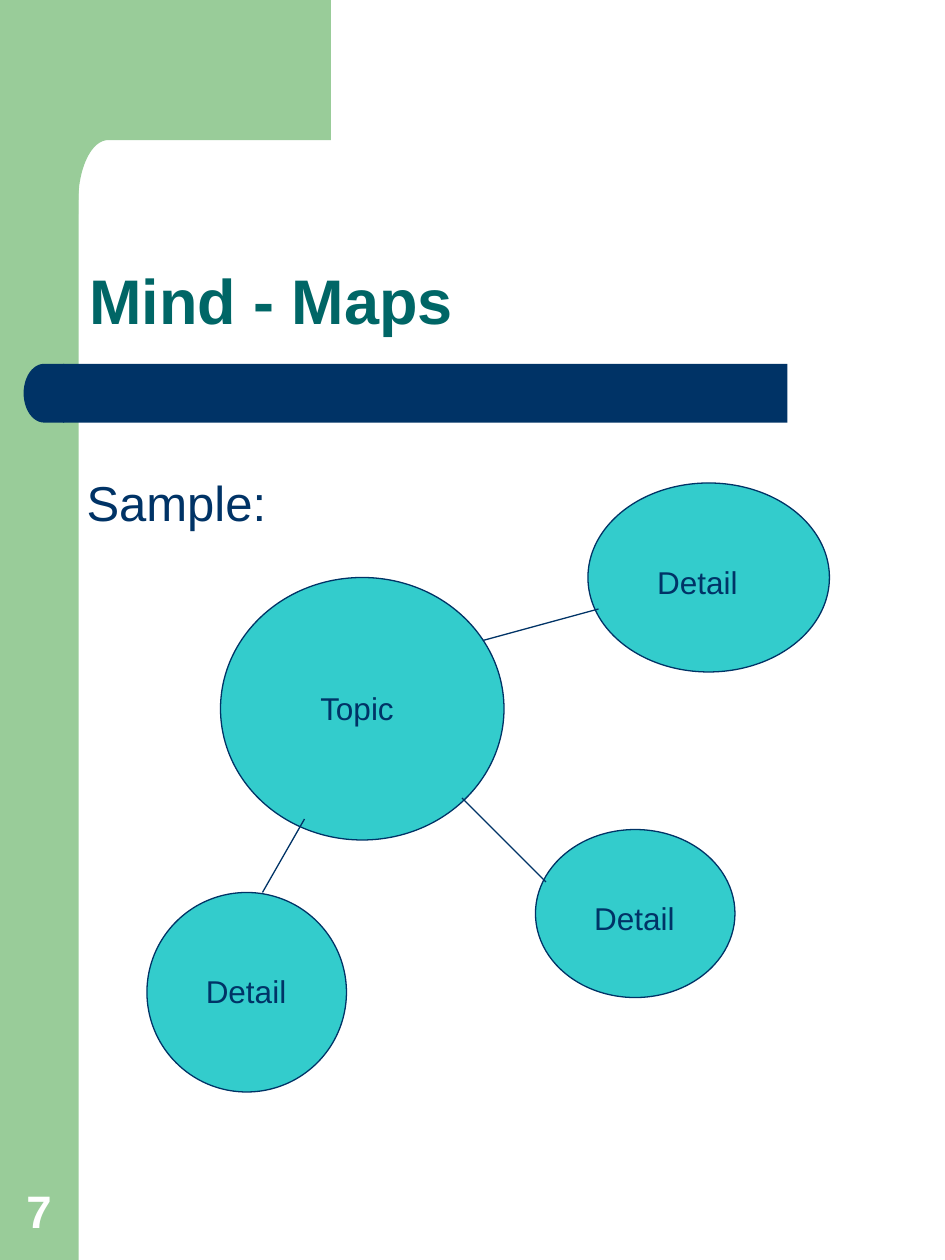
from math import cos, pi, sin

from lxml.etree import SubElement
from pptx import Presentation
from pptx.dml.color import RGBColor
from pptx.enum.shapes import MSO_CONNECTOR as Link, MSO_SHAPE as Preset
from pptx.enum.text import MSO_ANCHOR as Anchor, PP_ALIGN as Align
from pptx.oxml.ns import qn
from pptx.util import Inches, Pt

COLORS = {"leaf": "99CC99", "navy": "003366", "teal": "006666",
          "aqua": "33CCCC", "white": "FFFFFF"}


def arc(center_x, center_y, radius_x, radius_y, start, end, steps=24):
    angles = [start + (end - start) * step / steps for step in range(steps + 1)]
    return [(center_x + radius_x * cos(angle), center_y - radius_y * sin(angle))
            for angle in angles]


class GridPage:
    cells_per_inch = 12
    font = "Arial"
    line_width = Pt(0.75)

    def __init__(self, page):
        self.page = page
        self.shapes = page.shapes

    def size(self, cells):
        return Inches(cells / self.cells_per_inch)

    def color(self, name):
        return RGBColor.from_string(COLORS[name])

    def outline(self, line):
        line.color.rgb = self.color("navy")
        line.width = self.line_width

    def paint(self, shape, fill, outlined=False):
        shape.shadow.inherit = False
        shape.fill.solid()
        shape.fill.fore_color.rgb = self.color(fill)
        if outlined:
            self.outline(shape.line)
        else:
            shape.line.fill.background()

    def preset(self, kind, area, fill, outlined=False):
        shape = self.shapes.add_shape(kind, *map(self.size, area))
        self.paint(shape, fill, outlined)

    def polygon(self, points, fill):
        start, *rest = [tuple(map(self.size, point)) for point in points]
        builder = self.shapes.build_freeform(*start, scale=1.0)
        builder.add_line_segments(rest, close=True)
        self.paint(builder.convert_to_shape(), fill)

    def connector(self, start, end):
        link = self.shapes.add_connector(
            Link.STRAIGHT, *map(self.size, (*start, *end)))
        self.outline(link.line)
        SubElement(link._element.spPr, qn("a:effectLst"))

    def text(self, words, area, points, color="navy", bold=False, margin=0,
             align=Align.LEFT, anchor=Anchor.TOP, spacing=1.0):
        box = self.shapes.add_textbox(*map(self.size, area))
        frame = box.text_frame
        frame.word_wrap = True
        frame.vertical_anchor = anchor
        frame.margin_left = frame.margin_right = self.size(margin)
        frame.margin_top = frame.margin_bottom = self.size(margin)
        para = frame.paragraphs[0]
        para.alignment = align
        para.line_spacing = spacing
        span = para.add_run()
        span.text = words
        span.font.name = self.font
        span.font.size = Pt(points)
        span.font.bold = bold
        span.font.color.rgb = self.color(color)


def main():
    deck = Presentation()
    deck.slide_width, deck.slide_height = Inches(7.5), Inches(10)
    page = GridPage(deck.slides.add_slide(deck.slide_layouts[6]))

    page.preset(Preset.RECTANGLE, (0, 0, 7.5, 120), "leaf")
    corner = arc(10.3, 19.2, 2.85, 5.85, pi / 2, pi)
    page.polygon([(4.5, 0), (31.5, 0), (31.5, 13.35), *corner,
                  (7.45, 20.4), (4.5, 20.4)], "leaf")
    page.preset(Preset.RECTANGLE, (6, 34.65, 69, 5.6), "navy")
    cap = arc(4.2, 37.45, 1.95, 2.8, pi / 2, 3 * pi / 2)
    page.polygon([(6.1, 34.65), *cap, (6.1, 40.25)], "navy")

    page.text("7", (0.85, 111.6, 5.75, 6.25), 26, "white", True,
              align=Align.CENTER, anchor=Anchor.BOTTOM)
    page.text("Mind - Maps", (8.5, 14.25, 76, 18), 36, "teal", True,
              anchor=Anchor.BOTTOM, spacing=0.9)
    page.text("Sample:", (8.25, 45, 75.75, 61.5), 28)

    bubbles = [(21, 55, 27, 25), (56, 46, 23, 18),
               (51, 79, 19, 16), (14, 85, 19, 19)]
    for area in bubbles:
        page.preset(Preset.OVAL, area, "aqua", outlined=True)

    links = [((46, 61), (57, 58)), ((44, 76), (52, 84)), ((25, 85), (29, 78))]
    for start, end in links:
        page.connector(start, end)

    labels = [("Topic", (26, 65, 16, 4.5), Align.CENTER),
              ("Detail", (62, 53, 13, 4.5), Align.LEFT),
              ("Detail", (19, 92, 11, 4.5), Align.LEFT),
              ("Detail", (56, 85, 11, 4.5), Align.LEFT)]
    for words, area, align in labels:
        page.text(words, area, 18, margin=0.6, align=align)

    deck.save("out.pptx")


if __name__ == "__main__":
    main()
